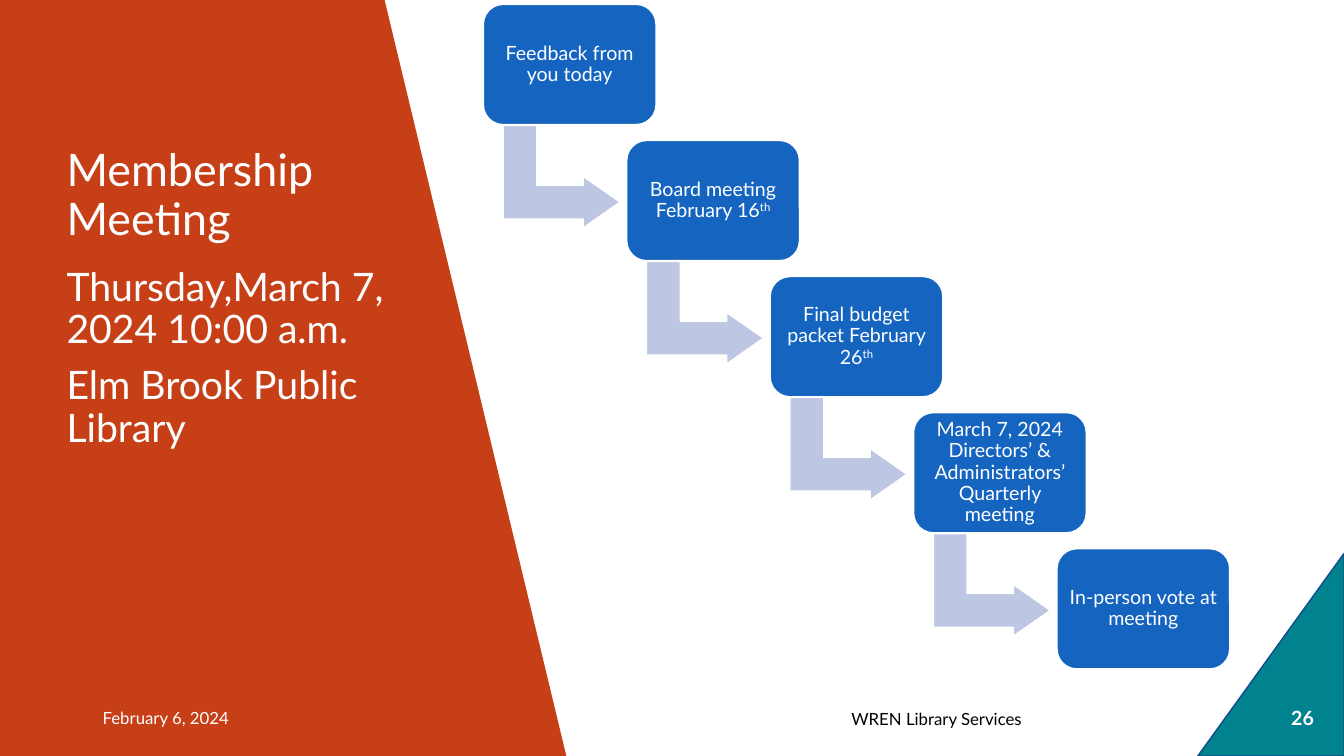
"""Build the membership meeting slide with its five-step budget timeline."""
from lxml.etree import SubElement
from pptx import Presentation
from pptx.dml.color import RGBColor
from pptx.enum.shapes import MSO_SHAPE
from pptx.enum.text import MSO_ANCHOR, MSO_AUTO_SIZE, PP_ALIGN
from pptx.oxml.ns import qn
from pptx.util import Inches, Pt

FONT = "Lato"
COLORS = {
    "white": "FFFFFF",
    "black": "000000",
    "panel": "C63F17",
    "corner": "00838E",
    "corner_line": "104B8E",
    "step": "1565C0",
    "arrow": "BDC6E2",
}
TITLE = "Membership Meeting"
DETAILS = ["Thursday,March 7, 2024 10:00 a.m.", "Elm Brook Public Library"]
STEPS = [
    ("Feedback from you today", ""),
    ("Board meeting February 16", "th"),
    ("Final budget packet February 26", "th"),
    ("March 7, 2024 Directors’ & Administrators’ Quarterly meeting", ""),
    ("In-person vote at meeting", ""),
]
FOOTERS = [
    ("WREN Library Services", (7.04, 6.93, 4.5, 0.4), 12, "black", PP_ALIGN.CENTER, False),
    ("26", (12.63, 6.92, 0.58, 0.4), 14, "white", PP_ALIGN.CENTER, True),
    ("February 6, 2024", (0.92, 6.92, 3, 0.4), 12, "white", PP_ALIGN.LEFT, False),
]
PANEL = [(-0.1, 7.68), (-0.1, -0.24), (3.75, -0.27), (5.67, 7.72)]
CORNER = [(11.88, 7.5), (13.33, 5.49), (13.33, 7.5)]
STEP_ORIGIN = (4.79, 0.04)
STEP_SIZE = (1.72, 1.2)
STEP_PITCH = (1.4225, 1.35)
ARROW_OFFSET = (0.27, 1.13)
ARROW_SIZE = (1.02, 1.16)
ARROW_ADJUSTMENTS = (0.328, 0.25, 0.358)


def color(name):
    return RGBColor.from_string(COLORS[name])


def paint(shape, fill, line=None, width=1):
    shape.shadow.inherit = False
    shape.fill.solid()
    shape.fill.fore_color.rgb = color(fill)
    if line:
        shape.line.color.rgb = color(line)
        shape.line.width = Pt(width)
    else:
        shape.line.fill.background()


def place(shape, box):
    shape.left, shape.top, shape.width, shape.height = map(Inches, box)


def style(paragraph, size, tint, align=PP_ALIGN.LEFT, bold=False, spacing=0.9):
    paragraph.alignment = align
    paragraph.line_spacing = spacing
    paragraph.font.name = FONT
    paragraph.font.size = Pt(size)
    paragraph.font.bold = bold
    paragraph.font.color.rgb = color(tint)


def add_polygon(slide, points, fill, line=None):
    builder = slide.shapes.build_freeform(*map(Inches, points[0]))
    builder.add_line_segments([tuple(map(Inches, point)) for point in points[1:]])
    paint(builder.convert_to_shape(), fill, line)


def add_heading(slide):
    title, body = slide.shapes.title, slide.placeholders[1]
    place(title, (0.56, 0.73, 3.4, 1.75))
    place(body, (0.56, 2.6, 3.85, 2.67))
    title.text_frame.text = TITLE
    title.text_frame.vertical_anchor = MSO_ANCHOR.BOTTOM
    style(title.text_frame.paragraphs[0], 32, "white")
    body.text_frame.text = "\n".join(DETAILS)
    body.text_frame.vertical_anchor = MSO_ANCHOR.TOP
    for paragraph in body.text_frame.paragraphs:
        style(paragraph, 28, "white")
        paragraph.space_before = Pt(10)
        properties = paragraph._p.get_or_add_pPr()
        properties.set("marL", "0")
        properties.set("indent", "0")
        bullet = SubElement(properties, qn("a:buNone"))
        properties.find(qn("a:defRPr")).addprevious(bullet)
    for shape in (title, body):
        shape.text_frame.word_wrap = True
        shape.text_frame.auto_size = MSO_AUTO_SIZE.NONE


def add_arrow(slide, left, top):
    arrow = slide.shapes.add_shape(
        MSO_SHAPE.BENT_UP_ARROW, *map(Inches, (left, top, *ARROW_SIZE)))
    arrow.rotation = 90
    for index, value in enumerate(ARROW_ADJUSTMENTS):
        arrow.adjustments[index] = value
    paint(arrow, "arrow", "white")


def add_step(slide, left, top, label, ordinal):
    step = slide.shapes.add_shape(
        MSO_SHAPE.ROUNDED_RECTANGLE, *map(Inches, (left, top, *STEP_SIZE)))
    paint(step, "step", "white", 1.5)
    frame = step.text_frame
    frame.word_wrap = True
    frame.vertical_anchor = MSO_ANCHOR.MIDDLE
    frame.margin_left = frame.margin_right = Inches(0.06)
    frame.margin_top = frame.margin_bottom = Inches(0.06)
    paragraph = frame.paragraphs[0]
    style(paragraph, 14, "white", PP_ALIGN.CENTER)
    paragraph.add_run().text = label
    if ordinal:
        run = paragraph.add_run()
        run.text = ordinal
        run.font._element.set("baseline", "30000")


def add_footer(slide, text, box, size, tint, align, bold):
    frame = slide.shapes.add_textbox(*map(Inches, box)).text_frame
    frame.word_wrap = True
    frame.vertical_anchor = MSO_ANCHOR.MIDDLE
    frame.text = text
    style(frame.paragraphs[0], size, tint, align, bold, 1.0)


def main():
    presentation = Presentation()
    presentation.slide_width, presentation.slide_height = Inches(13.33), Inches(7.5)
    slide = presentation.slides.add_slide(presentation.slide_layouts[1])
    add_polygon(slide, CORNER, "corner", "corner_line")
    add_polygon(slide, PANEL, "panel")
    add_heading(slide)
    for shape in (slide.shapes.title, slide.placeholders[1]):
        slide.shapes._spTree.append(shape._element)
    for index, (label, ordinal) in enumerate(STEPS):
        left, top = (start + index * pitch for start, pitch in zip(STEP_ORIGIN, STEP_PITCH))
        if index < len(STEPS) - 1:
            add_arrow(slide, left + ARROW_OFFSET[0], top + ARROW_OFFSET[1])
        add_step(slide, left, top, label, ordinal)
    for footer in FOOTERS:
        add_footer(slide, *footer)
    presentation.save("out.pptx")


if __name__ == "__main__":
    main()
